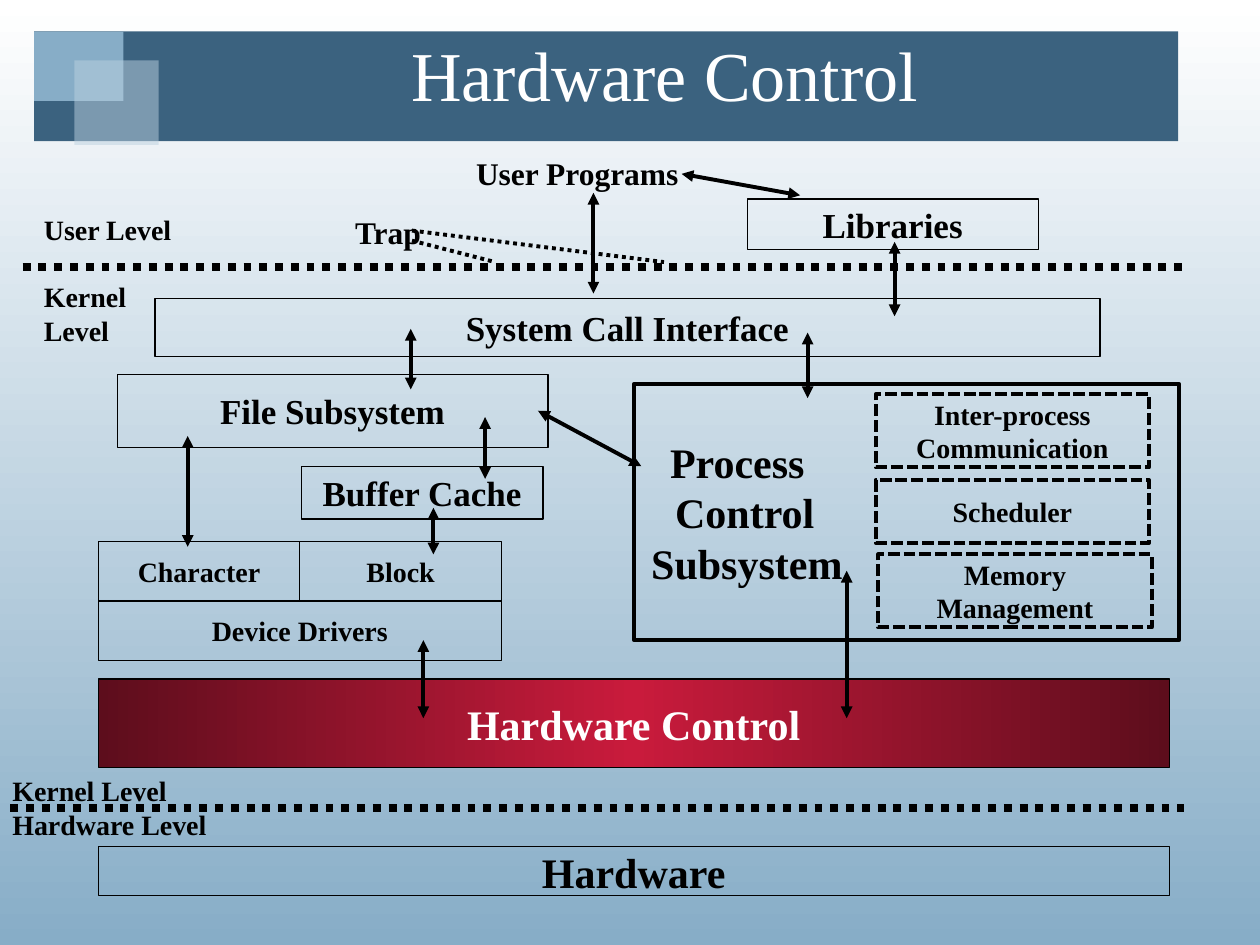
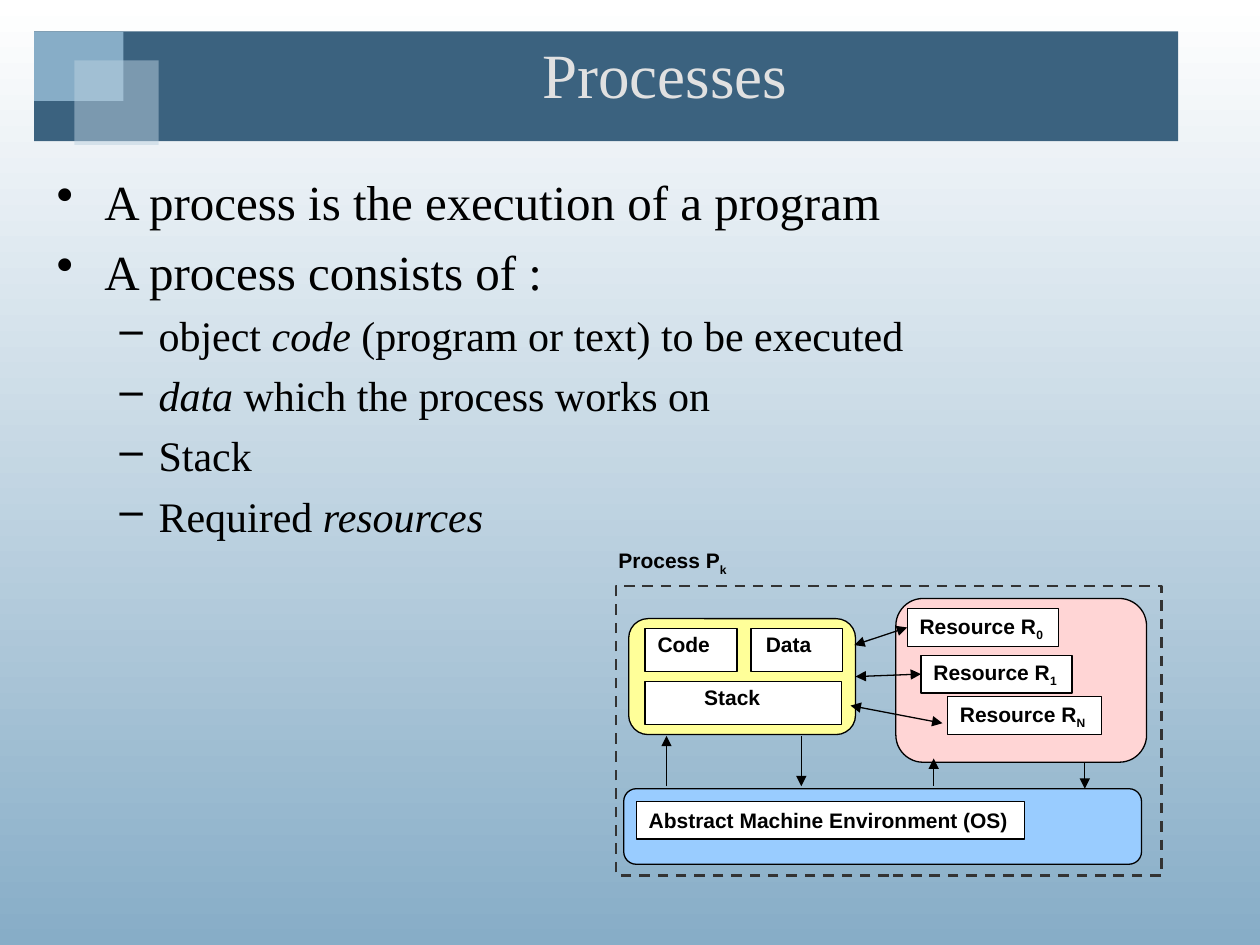
from copy import deepcopy

from pptx import Presentation
from pptx import util as u
from pptx.dml.color import RGBColor
from pptx.enum import dml, shapes, text
from pptx.oxml.ns import qn
from lxml import etree

PX = 9144
BLACK, WHITE, NAVY, SKY, PALE = "000000", "FFFFFF", "3B627F", "87ADC7", "BCD1E0"
SERIF, SANS = "Times New Roman", "Arial"
LEFT, CENTER, JUSTIFY = text.PP_ALIGN.LEFT, text.PP_ALIGN.CENTER, text.PP_ALIGN.JUSTIFY
TOP, MIDDLE = text.MSO_ANCHOR.TOP, text.MSO_ANCHOR.MIDDLE
RECT, ROUND = shapes.MSO_SHAPE.RECTANGLE, shapes.MSO_SHAPE.ROUNDED_RECTANGLE
DOTS, DASHES, LONG_DASHES = dml.MSO_LINE.ROUND_DOT, dml.MSO_LINE.SQUARE_DOT, dml.MSO_LINE.DASH
BOTH, START, END = ("headEnd", "tailEnd"), ("headEnd",), ("tailEnd",)


def rgb(value):
    return RGBColor.from_string(value)


def emu(*lengths):
    return [u.Emu(length * PX) for length in lengths]


class Deck:
    """Holds the shared style and the slide being drawn."""

    def __init__(self):
        self.prs = Presentation()
        self.prs.slide_width, self.prs.slide_height = emu(1000, 750)
        self.slide = None
        self.font, self.bold = SERIF, True

    def new_slide(self, title, size, color):
        self.slide = self.prs.slides.add_slide(self.prs.slide_layouts[6])
        self.gradient(self.slide.background.fill, (WHITE, SKY), 270)
        self.box((27, 25, 908, 87), fill=NAVY, line=None)
        self.box((27, 25, 71, 55), fill=SKY, line=None)
        veil = self.box((59, 48, 67, 67), fill=PALE, line=None)
        tint = veil.element.spPr.find(qn("a:solidFill"))[0]
        etree.SubElement(tint, qn("a:alpha")).set("val", "50000")
        self.font, self.bold = SERIF, False
        self.label((125, 0, 805, 117), [title], size, color, CENTER, MIDDLE, wrap=True)

    def gradient(self, fill, colors, angle):
        fill.gradient()
        fill.gradient_angle = angle
        for stop, color in zip(fill.gradient_stops, colors):
            stop.color.rgb = rgb(color)

    def stroke(self, line, width, dash=None, color=BLACK):
        line.width = u.Pt(width)
        line.color.rgb = rgb(color)
        if dash:
            line.dash_style = dash

    def box(self, place, lines=(), size=20, fill=None, line=BLACK, width=0.75, dash=None,
            kind=RECT, color=BLACK, align=CENTER, wrap=False):
        shape = self.slide.shapes.add_shape(kind, *emu(*place))
        shape.shadow.inherit = False
        if fill:
            shape.fill.solid()
            shape.fill.fore_color.rgb = rgb(fill)
        else:
            shape.fill.background()
        if line:
            self.stroke(shape.line, width, dash, line)
        else:
            shape.line.fill.background()
        if lines:
            self.fill_frame(shape.text_frame, lines, size, color, align, MIDDLE, wrap)
        return shape

    def glow_box(self, place, lines, size, edge, middle):
        shape = self.box(place, lines, size, color=WHITE)
        self.gradient(shape.fill, (edge, edge), 0)
        first = shape.element.spPr.find(qn("a:gradFill")).find(qn("a:gsLst"))[0]
        first.addnext(deepcopy(first))
        center = shape.fill.gradient_stops[1]
        center.position, center.color.rgb = 0.5, rgb(middle)

    def label(self, place, lines, size, color=BLACK, align=LEFT, anchor=TOP, wrap=False):
        frame = self.slide.shapes.add_textbox(*emu(*place)).text_frame
        return self.fill_frame(frame, lines, size, color, align, anchor, wrap)

    def fill_frame(self, frame, lines, size, color, align, anchor, wrap):
        frame.word_wrap, frame.vertical_anchor = wrap, anchor
        for index, runs in enumerate(lines):
            paragraph = frame.add_paragraph() if index else frame.paragraphs[0]
            self.fill_paragraph(paragraph, runs, size, color, align)
        return frame.paragraphs

    def fill_paragraph(self, paragraph, runs, size, color, align):
        paragraph.alignment = align
        for part in [runs] if isinstance(runs, str) else runs:
            words, style = (part, None) if isinstance(part, str) else part
            run = paragraph.add_run()
            run.text = words
            font = run.font
            font.name, font.size, font.bold = self.font, u.Pt(size), self.bold
            font.color.rgb = rgb(color)
            if style == "italic":
                font.italic = True
            elif style == "sub":
                run._r.get_or_add_rPr().set("baseline", "-25000")

    def indent(self, paragraph, left, first=0):
        props = paragraph._p.get_or_add_pPr()
        props.set("marL", str(left * PX))
        props.set("indent", str(first * PX))
        return props

    def bullets(self, place, items):
        levels = ((28, 38, -38, "•"), (24, 81, -31, "–"))
        frame = self.slide.shapes.add_textbox(*emu(*place)).text_frame
        frame.word_wrap = True
        for index, (level, runs) in enumerate(items):
            size, left, first, mark = levels[level]
            paragraph = frame.add_paragraph() if index else frame.paragraphs[0]
            paragraph.level = level
            paragraph.space_before = u.Pt(size * 0.23)
            self.fill_paragraph(paragraph, runs, size, BLACK, JUSTIFY)
            props = self.indent(paragraph, left, first)
            etree.SubElement(props, qn("a:buChar")).set("char", mark)

    def line(self, ends, width=2.25, dash=None, arrows=(), begin=None, end=None):
        link = self.slide.shapes.add_connector(shapes.MSO_CONNECTOR.STRAIGHT, *emu(*ends))
        self.stroke(link.line, width, dash)
        props = link.element.spPr
        for arrow in arrows:
            etree.SubElement(props.find(qn("a:ln")), qn("a:" + arrow)).set("type", "triangle")
        etree.SubElement(props, qn("a:effectLst"))
        if begin:
            link.begin_connect(*begin)
        if end:
            link.end_connect(*end)


def hardware_control(deck):
    deck.new_slide("Hardware Control", 40, WHITE)
    deck.bold = True
    for place, name in (
        ((593, 158, 231, 40), "Libraries"),
        ((123, 237, 750, 46), "System Call Interface"),
        ((93, 297, 342, 58), "File Subsystem"),
        ((239, 370, 192, 42), "Buffer Cache"),
    ):
        deck.box(place, [name])

    control = deck.box((503, 305, 433, 203), ["Process", "Control", "Subsystem"], 24,
                       width=2.25, align=LEFT, wrap=True)
    for paragraph, left in zip(control.text_frame.paragraphs, (19, 23, 4)):
        deck.indent(paragraph, left)
    for place, lines in (
        ((695, 313, 217, 58), ["Inter-process", "Communication"]),
        ((695, 381, 217, 50), ["Scheduler"]),
        ((697, 440, 217, 58), ["Memory", "Management"]),
    ):
        deck.box(place, lines, 16, width=2.25, dash=DASHES)

    deck.glow_box((78, 539, 850, 70), ["Hardware Control"], 24, "5D0D1C", "C91B3C")
    deck.box((78, 672, 850, 39), ["Hardware"], 24)
    deck.box((78, 477, 320, 47), ["Device Drivers"], 16)
    for column, name in enumerate(("Character", "Block")):
        deck.box((78 + 160 * column, 430, 160, 47), [name], 16)

    deck.line((18, 212, 943, 212), 4.5, DOTS)
    deck.line((8, 641, 940, 641), 4.5, DOTS)
    levels = deck.label((25, 164, 139, 118), ["User Level", "Kernel Level"], 16, wrap=True)
    levels[1].space_before = u.Pt(19)
    deck.label((0, 609, 176, 64), ["Kernel Level", "Hardware Level"], 16)
    deck.label((272, 164, 73, 40), ["Trap"], 18)
    deck.line((327, 191, 393, 208), dash=DOTS)
    deck.line((327, 183, 527, 208), dash=DOTS)
    deck.label((368, 117, 183, 40), ["User Programs"], 18)

    for x, top, bottom in (
        (710, 192, 251), (471, 153, 233), (641, 264, 316), (326, 261, 309), (385, 331, 380),
        (149, 346, 434), (344, 403, 440), (336, 508, 570), (672, 453, 570),
    ):
        deck.line((x, top, x, bottom), arrows=BOTH)
    deck.line((541, 138, 635, 155), arrows=BOTH)
    deck.line((427, 326, 509, 370), arrows=BOTH)


def processes(deck):
    deck.new_slide("Processes", 36, "E1E1E1")
    deck.bullets((35, 131, 921, 543), (
        (0, "A process is the execution of a program"),
        (0, "A process consists of :"),
        (1, ["object ", ("code", "italic"), " (program or text) to be executed"]),
        (1, [("data", "italic"), " which the process works on"]),
        (1, "Stack"),
        (1, ["Required ", ("resources", "italic")]),
    ))

    deck.font, deck.bold = SANS, True
    deck.box((495, 626, 411, 60), fill="99CCFF", kind=ROUND)
    deck.box((711, 475, 199, 130), fill="FFD5D5", kind=ROUND)
    program = deck.box((499, 491, 180, 92), fill="FFFF99", kind=ROUND)
    for place, label_place, name in (
        ((512, 499, 73, 34), (512, 496, 62, 30), "Code"),
        ((596, 499, 73, 34), (598, 496, 56, 30), "Data"),
        ((512, 541, 156, 34), (549, 538, 65, 30), "Stack"),
    ):
        deck.box(place, fill=WHITE)
        deck.label(label_place, [name], 12)

    resources = [
        deck.box((x, y, width, 30), [["Resource R", (index, "sub")]], 12, WHITE, align=LEFT)
        for x, y, width, index in ((720, 483, 120, "0"), (731, 520, 120, "1"), (752, 553, 122, "N"))
    ]
    deck.line((678, 512, 722, 502), 0.75, arrows=BOTH, end=(resources[0], 1))
    deck.line((680, 538, 729, 538), 0.75, arrows=BOTH, begin=(program, 3), end=(resources[1], 1))
    deck.line((675, 560, 748, 574), 0.75, arrows=BOTH)
    deck.box((505, 636, 308, 30), ["Abstract Machine Environment (OS)"], 12, WHITE, align=LEFT)
    for x, bottom, top, arrow in (
        (529, 624, 584, END), (636, 624, 584, START), (861, 626, 605, START), (741, 624, 602, END),
    ):
        deck.line((x, bottom, x, top), 0.75, arrows=arrow)
    deck.label((481, 430, 108, 30), [["Process P", ("k", "sub")]], 12)
    deck.box((489, 465, 433, 230), line="333333", width=1.5, dash=LONG_DASHES)


def main():
    deck = Deck()
    hardware_control(deck)
    processes(deck)
    deck.prs.save("out.pptx")


if __name__ == "__main__":
    main()
